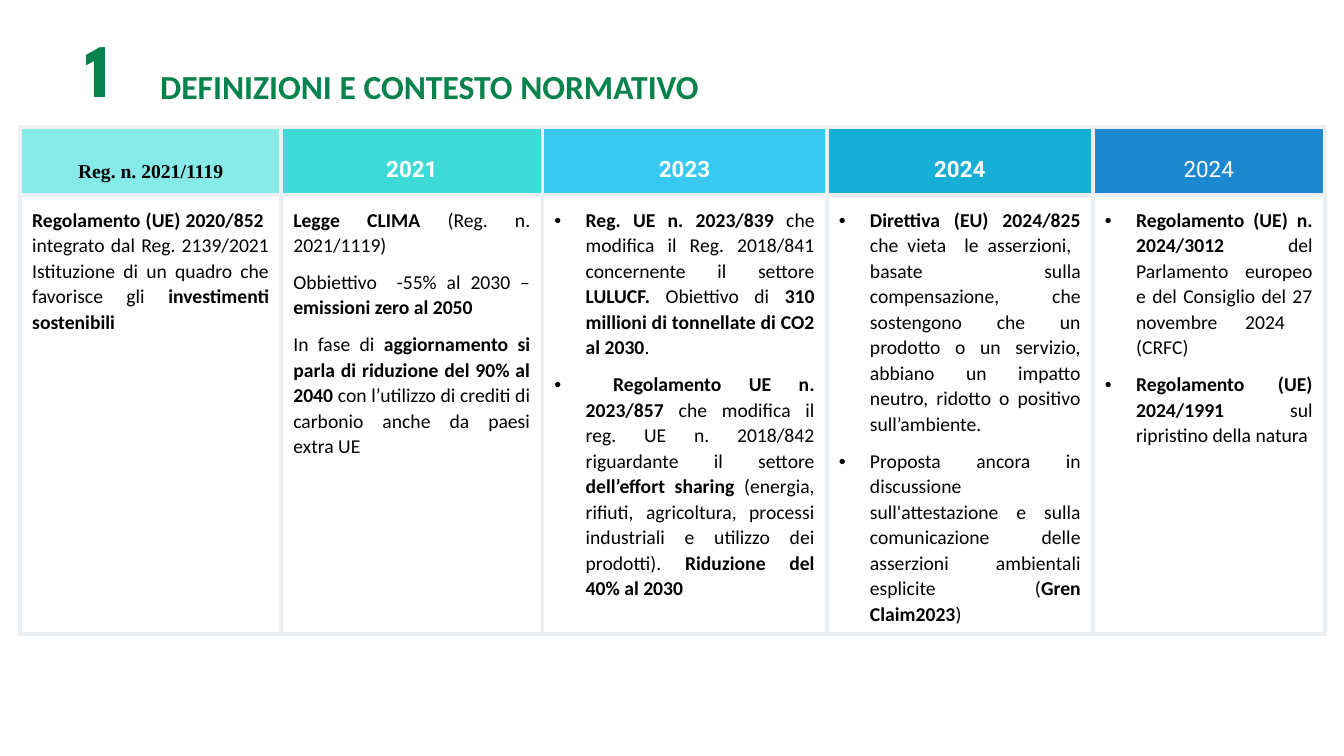
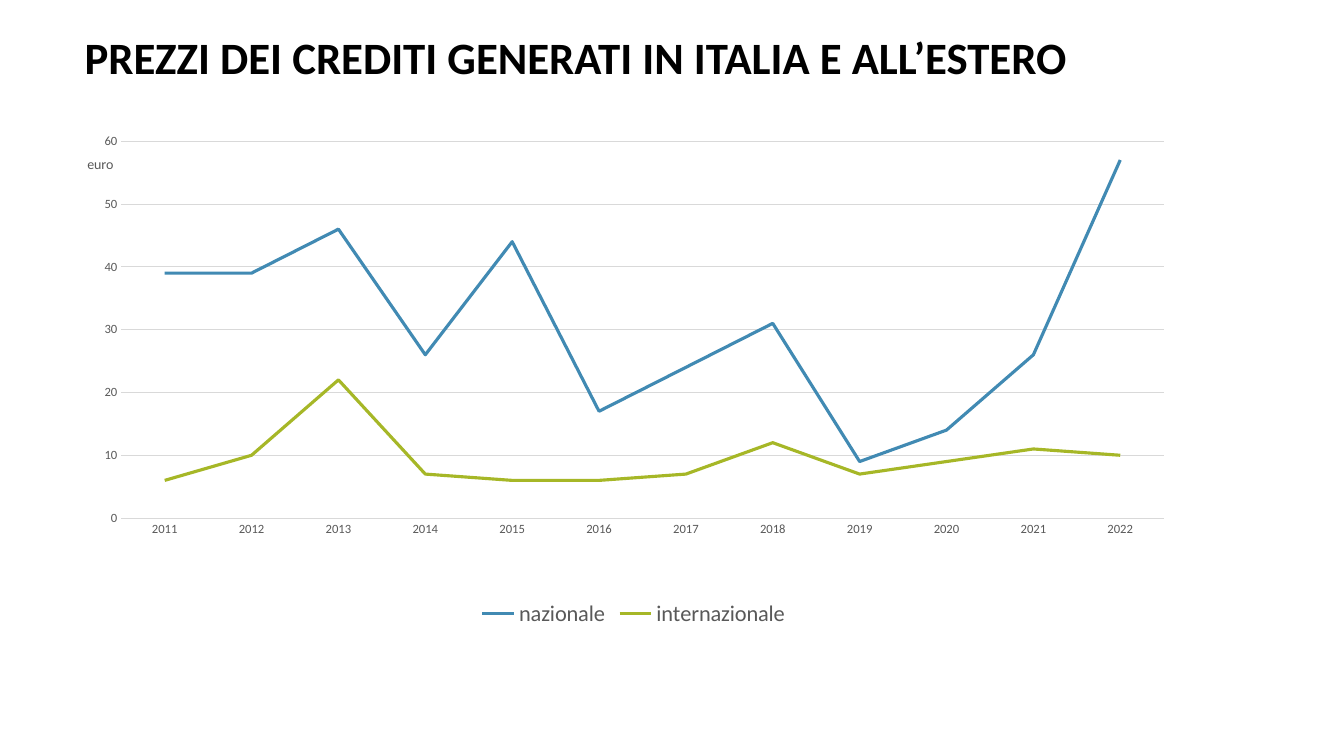
from lxml import etree
from pptx import Presentation
from pptx import util as u
from pptx.chart.data import CategoryChartData
from pptx.dml.color import RGBColor
from pptx.enum import chart as ch, text
from pptx.oxml import ns

GREEN = RGBColor(0x06, 0x82, 0x4D)
BLACK = RGBColor(0, 0, 0)
WHITE = RGBColor(255, 255, 255)
GREY = RGBColor(0x59, 0x59, 0x59)
RULE = RGBColor(0xD9, 0xD9, 0xD9)
BORDER = RGBColor(0xED, 0xF0, 0xF2)
BLUE = RGBColor(0x41, 0x8A, 0xB3)
LIME = RGBColor(0xA6, 0xB7, 0x27)
FONT = "Calibri"
PAD = u.Inches(0.12)
HANG = u.Inches(0.31)

COLUMNS = [
    (2.59, "Reg. n. 2021/1119", "Times New Roman", 14, BLACK, True,
     RGBColor(0x86, 0xEA, 0xE9), False,
     ["**Regolamento (UE) 2020/852  **integrato dal Reg. 2139/2021 Istituzione di un quadro "
      "che favorisce gli **investimenti sostenibili**"]),
    (2.59, "2021", "Roboto", 16, WHITE, True, RGBColor(0x3E, 0xDA, 0xD8), False,
     ["**Legge CLIMA **(Reg. n. 2021/1119)",
      "Obbiettivo  -55% al 2030 – **emissioni zero al 2050**",
      "In fase di **aggiornamento si parla di riduzione del 90% al 2040 **con l’utilizzo di "
      "crediti di carbonio anche da paesi extra UE"]),
    (2.82, "2023", "Roboto", 16, WHITE, True, RGBColor(0x37, 0xC9, 0xEF), True,
     ["**Reg. UE n. 2023/839 **che modifica il Reg. 2018/841 concernente il settore "
      "**LULUCF. **Obiettivo di **310 millioni di tonnellate di CO2 al 2030**.",
      " **Regolamento UE n. 2023/857 **che modifica il reg. UE n. 2018/842 riguardante il "
      "settore **dell’effort sharing **(energia, rifiuti, agricoltura, processi industriali "
      "e utilizzo dei prodotti). **Riduzione del 40% al 2030**"]),
    (2.64, "2024", "Roboto", 16, WHITE, True, RGBColor(0x18, 0xAF, 0xD6), True,
     ["**Direttiva (EU) 2024/825 **che vieta  le asserzioni,  basate sulla compensazione, "
      "che sostengono che un prodotto o un servizio, abbiano un impatto neutro, ridotto o "
      "positivo sull’ambiente.",
      "Proposta ancora in discussione sull'attestazione e sulla comunicazione delle "
      "asserzioni ambientali esplicite (**Gren Claim2023**)"]),
    (2.3, "2024", "Roboto", 16, WHITE, False, RGBColor(0x1C, 0x88, 0xCF), True,
     ["**Regolamento (UE) n. 2024/3012 **del Parlamento europeo e del Consiglio del 27 "
      "novembre 2024  (CRFC)",
      "**Regolamento (UE) 2024/1991 **sul ripristino della natura"]),
]

YEARS = [str(year) for year in range(2011, 2023)]
PRICES = [
    ("nazionale", BLUE, [39, 39, 46, 26, 44, 17, 24, 31, 9, 14, 26, 57]),
    ("internazionale", LIME, [6, 10, 22, 7, 6, 6, 7, 12, 7, 9, 11, 10]),
]


def style(font, size, color, bold=False, name=FONT):
    """Set the face, size, colour and weight of a font."""
    font.name, font.size, font.bold = name, u.Pt(size), bold
    font.color.rgb = color


def add_title(slide, box, words, size, color, name=FONT, align=None, spacing=None):
    """Place one line of bold heading text in a box."""
    tf = slide.shapes.add_textbox(*map(u.Inches, box)).text_frame
    tf.word_wrap = True
    p = tf.paragraphs[0]
    p.text = words
    p.alignment, p.line_spacing = align, spacing
    style(p.runs[0].font, size, color, True, name)


def add_borders(cell):
    """Draw the same rule on all four sides of a cell."""
    tcPr = cell._tc.get_or_add_tcPr()
    for i, side in enumerate(("a:lnL", "a:lnR", "a:lnT", "a:lnB")):
        ln = etree.Element(ns.qn(side), w=str(u.Pt(3)))
        fill = etree.SubElement(ln, ns.qn("a:solidFill"))
        etree.SubElement(fill, ns.qn("a:srgbClr"), val=str(BORDER))
        tcPr.insert(i, ln)


def prepare_cell(cell, color):
    """Give a cell its fill, margins and borders."""
    cell.fill.solid()
    cell.fill.fore_color.rgb = color
    cell.margin_left = cell.margin_right = cell.margin_top = cell.margin_bottom = PAD
    add_borders(cell)


def fill_header(cell, words, name, size, color, bold):
    """Write a centred column heading."""
    cell.vertical_anchor = text.MSO_ANCHOR.MIDDLE
    p = cell.text_frame.paragraphs[0]
    p.text = words
    p.alignment = text.PP_ALIGN.CENTER
    p.line_spacing = u.Pt(31.2)
    style(p.runs[0].font, size, color, bold, name)


def fill_body(cell, items, bulleted):
    """Write justified paragraphs, with bold parts between double asterisks."""
    tf = cell.text_frame
    for i, item in enumerate(items):
        p = tf.add_paragraph() if i else tf.paragraphs[0]
        p.alignment = text.PP_ALIGN.JUSTIFY
        p.line_spacing, p.space_after = 1.07, u.Pt(8)
        if bulleted:
            pPr = p._p.get_or_add_pPr()
            pPr.set("marL", str(HANG))
            pPr.set("indent", str(-HANG))
            etree.SubElement(pPr, ns.qn("a:buFont"), typeface="Arial")
            etree.SubElement(pPr, ns.qn("a:buChar"), char="•")
        for j, part in enumerate(item.split("**")):
            if part:
                r = p.add_run()
                r.text = part
                style(r.font, 14, BLACK, j % 2 == 1)


def add_rules_table(slide, box):
    """Place the table of regulations, one column per year."""
    table = slide.shapes.add_table(2, len(COLUMNS), *map(u.Inches, box)).table
    table.horz_banding = False
    table.rows[0].height = u.Inches(0.67)
    table.rows[1].height = u.Inches(box[3] - 0.67)
    for i, (width, words, name, size, color, bold, fill, bulleted, items) in enumerate(COLUMNS):
        table.columns[i].width = u.Inches(width)
        head, body = table.cell(0, i), table.cell(1, i)
        prepare_cell(head, fill)
        prepare_cell(body, WHITE)
        fill_header(head, words, name, size, color, bold)
        fill_body(body, items, bulleted)


def set_layout(parent, **values):
    """Fix the place of a chart part as fractions of the chart."""
    for old in parent.findall(ns.qn("c:layout")):
        parent.remove(old)
    layout = etree.Element(ns.qn("c:layout"))
    manual = etree.SubElement(layout, ns.qn("c:manualLayout"))
    for tag, value in values.items():
        etree.SubElement(manual, ns.qn("c:" + tag), val=str(value))
    parent.insert(1 if parent[0].tag == ns.qn("c:tx") else 0, layout)


def add_price_chart(slide, box):
    """Place the line chart of credit prices."""
    data = CategoryChartData()
    data.categories = YEARS
    for name, _, values in PRICES:
        data.add_series(name, values)
    chart = slide.shapes.add_chart(ch.XL_CHART_TYPE.LINE, *map(u.Inches, box), data).chart
    chart.has_title = False
    style(chart.font, 10, BLACK)
    for series, (_, color, _) in zip(chart.plots[0].series, PRICES):
        series.smooth = False
        series.format.line.color.rgb = color
        series.format.line.width = u.Pt(2.25)
    chart.plots[0].vary_by_categories = False

    years, euros = chart.category_axis, chart.value_axis
    for axis in (years, euros):
        axis.major_tick_mark = axis.minor_tick_mark = ch.XL_TICK_MARK.NONE
        style(axis.tick_labels.font, 9, GREY)
    euros.minimum_scale, euros.maximum_scale, euros.major_unit = 0, 60, 10
    euros.format.line.fill.background()
    for line in (years.format.line, euros.major_gridlines.format.line):
        line.color.rgb = RULE
        line.width = u.Pt(0.75)

    p = years.axis_title.text_frame.paragraphs[0]
    p.text = "euro"
    style(p.runs[0].font, 10, GREY)
    set_layout(years.axis_title._element, xMode="edge", yMode="edge", x=0.002, y=0.057)
    set_layout(chart._chartSpace.chart.plotArea, layoutTarget="inner", xMode="edge",
               yMode="edge", x=0.035, y=0.034, w=0.946, h=0.742)

    chart.has_legend = True
    chart.legend.position = ch.XL_LEGEND_POSITION.BOTTOM
    chart.legend.include_in_layout = False
    style(chart.legend.font, 16, GREY)


def build_rules_slide(slide):
    """Build the slide on definitions and regulations."""
    add_title(slide, (1.49, 0.6, 7.61, 0.5), "DEFINIZIONI E CONTESTO NORMATIVO", 24, GREEN)
    add_title(slide, (0.59, 0.17, 0.77, 1.01), "1", 54, GREEN, "League Spartan",
              text.PP_ALIGN.CENTER)
    add_rules_table(slide, (0.2, 1.26, 12.94, 5.03))


def build_prices_slide(slide):
    """Build the slide on credit prices."""
    add_title(slide, (0.74, 0.31, 11.57, 0.72),
              "PREZZI DEI CREDITI GENERATI IN ITALIA E ALL’ESTERO", 32, BLACK, spacing=0.9)
    add_price_chart(slide, (0.82, 1.23, 10.93, 5.04))


def main():
    """Build and save the presentation."""
    prs = Presentation()
    prs.slide_width, prs.slide_height = u.Inches(13.33), u.Inches(7.5)
    for build in (build_rules_slide, build_prices_slide):
        build(prs.slides.add_slide(prs.slide_layouts[6]))
    prs.save("out.pptx")


if __name__ == "__main__":
    main()
